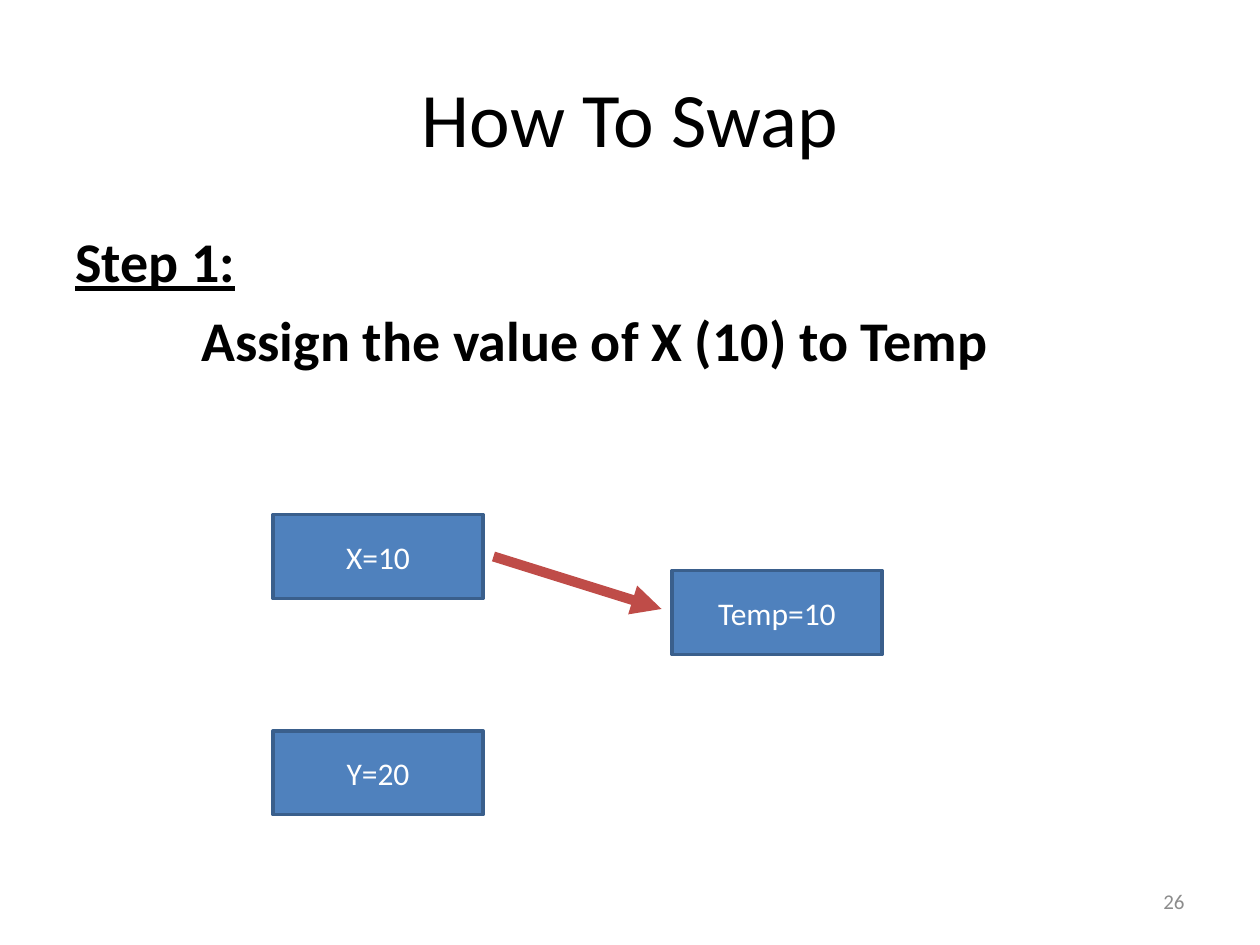
from lxml import etree
from pptx import Presentation
from pptx.dml.color import RGBColor
from pptx.enum.shapes import MSO_CONNECTOR, MSO_SHAPE
from pptx.enum.text import MSO_ANCHOR as ANCHOR, PP_ALIGN as ALIGN
from pptx.oxml.ns import qn
from pptx.util import Pt

BOX_W, BOX_H = 120, 48
VARIABLES = [("X=10", 156, 294), ("Y=20", 156, 417.6), ("Temp=10", 384, 326)]


def rgb(value):
    return RGBColor.from_string(value)


def place(sp, box):
    sp.left, sp.top, sp.width, sp.height = (Pt(v) for v in box)


def add_run(p, text, size, color, bold=False, underline=False):
    r = p.add_run()
    r.text = text
    r.font.name = "Calibri"
    r.font.size = Pt(size)
    r.font.color.rgb = rgb(color)
    r.font.bold = bold
    r.font.underline = underline


def write_line(sp, text, size, color, align):
    tf = sp.text_frame
    tf.word_wrap = True
    tf.vertical_anchor = ANCHOR.MIDDLE
    p = tf.paragraphs[0]
    p.alignment = align
    add_run(p, text, size, color)


def add_title(s, box):
    place(s.shapes.title, box)
    write_line(s.shapes.title, "How To Swap", 44, "000000", ALIGN.CENTER)


def add_step(s, box):
    tf = s.shapes.add_textbox(*(Pt(v) for v in box)).text_frame
    tf.word_wrap = True
    heading, detail = tf.paragraphs[0], tf.add_paragraph()
    for p in (heading, detail):
        p.space_before = Pt(6.4)
    add_run(heading, "Step 1:", 32, "000000", bold=True, underline=True)
    detail._p.get_or_add_pPr().set("marL", str(Pt(72)))
    add_run(detail, "Assign the value of X (10) to Temp", 32, "000000", bold=True)


def add_variable(s, text, box):
    sp = s.shapes.add_shape(MSO_SHAPE.RECTANGLE, *(Pt(v) for v in box))
    sp.shadow.inherit = False
    sp.fill.solid()
    sp.fill.fore_color.rgb = rgb("4F81BD")
    sp.line.color.rgb = rgb("3A5F8C")
    sp.line.width = Pt(2)
    write_line(sp, text, 18, "FFFFFF", ALIGN.CENTER)


def add_arrow(s, start, end):
    arrow = s.shapes.add_connector(
        MSO_CONNECTOR.STRAIGHT, *(Pt(v) for v in start + end))
    arrow.line.color.rgb = rgb("BF4C48")
    arrow.line.width = Pt(5.75)
    etree.SubElement(arrow.line._get_or_add_ln(), qn("a:tailEnd"), type="triangle")
    etree.SubElement(arrow._element.spPr, qn("a:effectLst"))


def add_page_number(s, box):
    sp = s.shapes.add_textbox(*(Pt(v) for v in box))
    write_line(sp, "26", 12, "8C8C8C", ALIGN.RIGHT)


def main():
    prs = Presentation()
    prs.slide_width, prs.slide_height = Pt(720), Pt(540)
    s = prs.slides.add_slide(prs.slide_layouts[5])
    add_title(s, (36, 21.6, 648, 90))
    add_page_number(s, (516, 500.5, 168, 28.75))
    add_step(s, (36, 126, 648, 93))
    for text, left, top in VARIABLES:
        add_variable(s, text, (left, top, BOX_W, BOX_H))
    add_arrow(s, (282, 318), (378, 348))
    prs.save("out.pptx")


if __name__ == "__main__":
    main()
